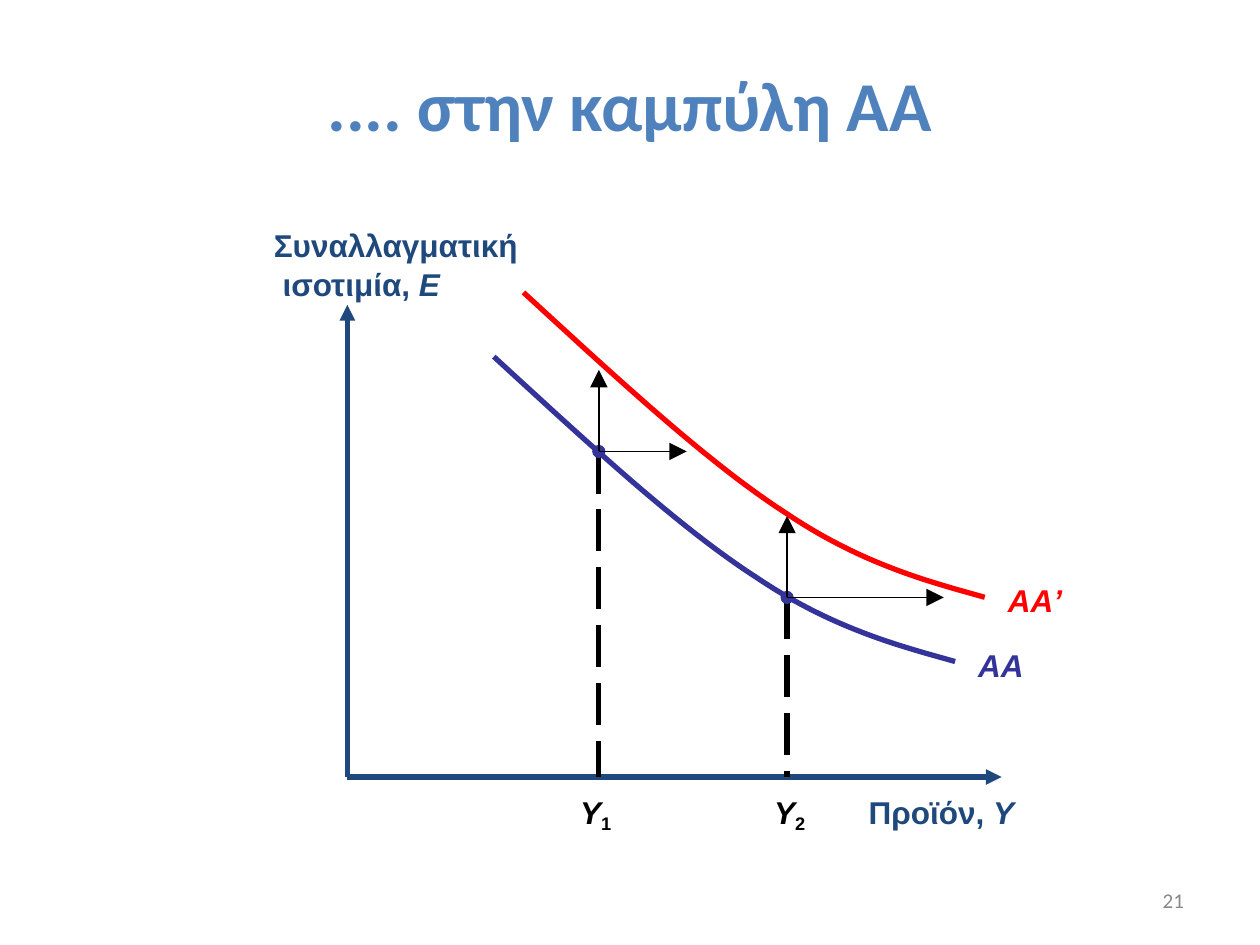
import pptx
import pptx.dml.color
import pptx.enum.dml
import pptx.enum.shapes
import pptx.enum.text
import pptx.oxml
import pptx.oxml.ns
import pptx.util

NAVY, INDIGO, RED, BLACK = "1F487C", "333399", "FF0000", "000000"
ORIGIN = (198.5, 444)
AA_CURVE = [
    [(282.2, 203.8), (335.5, 252.7), (387.4, 301), (432, 329.8)],
    [(432, 329.8), (475.2, 358.9), (513.4, 369), (545.8, 378)],
]
SHIFT = (16.9, -36.7)
STEPS = 24
DOT_SIZE = 6.8


def points(*values):
    return [pptx.util.Pt(value) for value in values]


def color(hex_value):
    return pptx.dml.color.RGBColor.from_string(hex_value)


def apply(target, values):
    for name, value in values.items():
        setattr(target, name, value)


def format_line(line, hex_value, width):
    line.width = pptx.util.Pt(width)
    line.color.rgb = color(hex_value)


def add_run(paragraph, text, hex_value, size=18, attributes=None, **values):
    run = paragraph.add_run()
    run.text = text
    apply(run.font, {"name": "Arial", "bold": True,
                     "size": pptx.util.Pt(size), **values})
    run.font.color.rgb = color(hex_value)
    for name, value in (attributes or {}).items():
        run.font._element.set(name, value)


def format_frame(frame, top_inset=0):
    apply(frame, {
        "word_wrap": True,
        "auto_size": pptx.enum.text.MSO_AUTO_SIZE.NONE,
        "vertical_anchor": pptx.enum.text.MSO_ANCHOR.TOP,
        "margin_left": 0, "margin_right": 0, "margin_bottom": 0,
        "margin_top": pptx.util.Pt(top_inset),
    })


def set_indent(paragraph, left):
    paragraph.alignment = pptx.enum.text.PP_ALIGN.LEFT
    properties = paragraph._p.get_or_add_pPr()
    properties.set("marL", str(pptx.util.Pt(left)))
    properties.set("indent", "0")


def add_text_box(slide, box, indents=(1,)):
    frame = slide.shapes.add_textbox(*points(*box)).text_frame
    format_frame(frame)
    for _ in indents[1:]:
        frame.add_paragraph()
    for paragraph, indent in zip(frame.paragraphs, indents):
        set_indent(paragraph, indent)
    return frame.paragraphs


def add_title(slide):
    title = slide.shapes.title
    apply(title, dict(zip(("left", "top", "width", "height"),
                          points(61.2, 15.8, 597.6, 95.8))))
    format_frame(title.text_frame, 19.4)
    paragraph = title.text_frame.paragraphs[0]
    set_indent(paragraph, 126)
    add_run(paragraph, ".... στην καμπύλη AA", "4F81BC", 40, name="Calibri")


def add_line(slide, start, end, hex_value, width, head=None, dash=None):
    connector = slide.shapes.add_connector(
        pptx.enum.shapes.MSO_CONNECTOR.STRAIGHT, *points(*start, *end))
    format_line(connector.line, hex_value, width)
    if dash:
        connector.line.dash_style = dash
    if head:
        connector.line._get_or_add_ln().append(pptx.oxml.parse_xml(
            f'<a:tailEnd {pptx.oxml.ns.nsdecls("a")} type="triangle" '
            f'w="{head}" len="{head}"/>'))
    connector._element.spPr.append(pptx.oxml.parse_xml(
        f'<a:effectLst {pptx.oxml.ns.nsdecls("a")}/>'))


def bezier(controls, position):
    rest = 1 - position
    weights = (rest ** 3, 3 * rest ** 2 * position,
               3 * rest * position ** 2, position ** 3)
    return [sum(weight * value for weight, value in zip(weights, axis))
            for axis in zip(*controls)]


def add_curve(slide, hex_value, shift=(0, 0)):
    vertices = [points(x + shift[0], y + shift[1])
                for controls in AA_CURVE
                for x, y in (bezier(controls, step / STEPS)
                             for step in range(STEPS + 1))]
    builder = slide.shapes.build_freeform(*vertices[0])
    builder.add_line_segments(vertices[1:], close=False)
    curve = builder.convert_to_shape()
    curve.shadow.inherit = False
    curve.fill.background()
    format_line(curve.line, hex_value, 3)


def add_dot(slide, x, y):
    dot = slide.shapes.add_shape(
        pptx.enum.shapes.MSO_SHAPE.OVAL,
        *points(x - DOT_SIZE / 2, y - DOT_SIZE / 2, DOT_SIZE, DOT_SIZE))
    dot.shadow.inherit = False
    dot.fill.solid()
    dot.fill.fore_color.rgb = color(INDIGO)
    format_line(dot.line, INDIGO, 0.75)


def add_output_level(slide, x, y, reach, label_left, subscript):
    add_line(slide, (x, y), (x, ORIGIN[1]), BLACK, 3,
             dash=pptx.enum.dml.MSO_LINE.LONG_DASH)
    add_dot(slide, x, y)
    add_line(slide, (x, y), (x, y - 46.6), BLACK, 1, "lg")
    add_line(slide, (x, y), (x + reach, y), BLACK, 1, "lg")
    label = add_text_box(slide, (label_left, 452.9, 22, 26))[0]
    add_run(label, "Y", BLACK, italic=True)
    add_run(label, subscript, BLACK, attributes={"baseline": "-21000"})


def add_axes(slide):
    add_line(slide, ORIGIN, (ORIGIN[0], 174.2), NAVY, 3, "med")
    add_line(slide, ORIGIN, (572.4, ORIGIN[1]), NAVY, 3, "med")
    output = add_text_box(slide, (495.4, 452.9, 90, 22.3))[0]
    add_run(output, "Προϊόν, ", NAVY)
    add_run(output, "Y", NAVY, italic=True)
    exchange, rate = add_text_box(slide, (155.5, 128.9, 150, 44), (1, 6))
    add_run(exchange, "Συναλλαγματική", NAVY)
    rate.space_before = pptx.util.Pt(1)
    add_run(rate, "ισοτιμία, ", NAVY)
    add_run(rate, "E", NAVY, italic=True)


def add_curve_labels(slide):
    shifted, initial = add_text_box(slide, (558, 331.9, 56, 60), (18, 1))
    add_run(shifted, "A", RED, italic=True)
    add_run(shifted, "A", RED, italic=True, attributes={"spc": "-110"})
    add_run(shifted, "’", RED, italic=True)
    initial.space_before = pptx.util.Pt(15.4)
    add_run(initial, "AA", INDIGO, italic=True)


def add_page_number(slide):
    paragraph = add_text_box(slide, (662.4, 509, 20, 13.7), (2,))[0]
    paragraph.line_spacing = pptx.util.Pt(12.4)
    add_run(paragraph, "21", "888888", 12, name="Calibri", bold=False)


def main():
    presentation = pptx.Presentation()
    presentation.slide_width, presentation.slide_height = points(720, 540)
    slide = presentation.slides.add_slide(presentation.slide_layouts[5])
    add_title(slide)
    add_axes(slide)
    add_curve(slide, INDIGO)
    add_output_level(slide, 342.2, 258, 50.2, 330.5, "1")
    add_output_level(slide, 449.8, 341.4, 89.5, 441.4, "2")
    add_curve(slide, RED, SHIFT)
    add_curve_labels(slide)
    add_page_number(slide)
    presentation.save("out.pptx")


if __name__ == "__main__":
    main()
